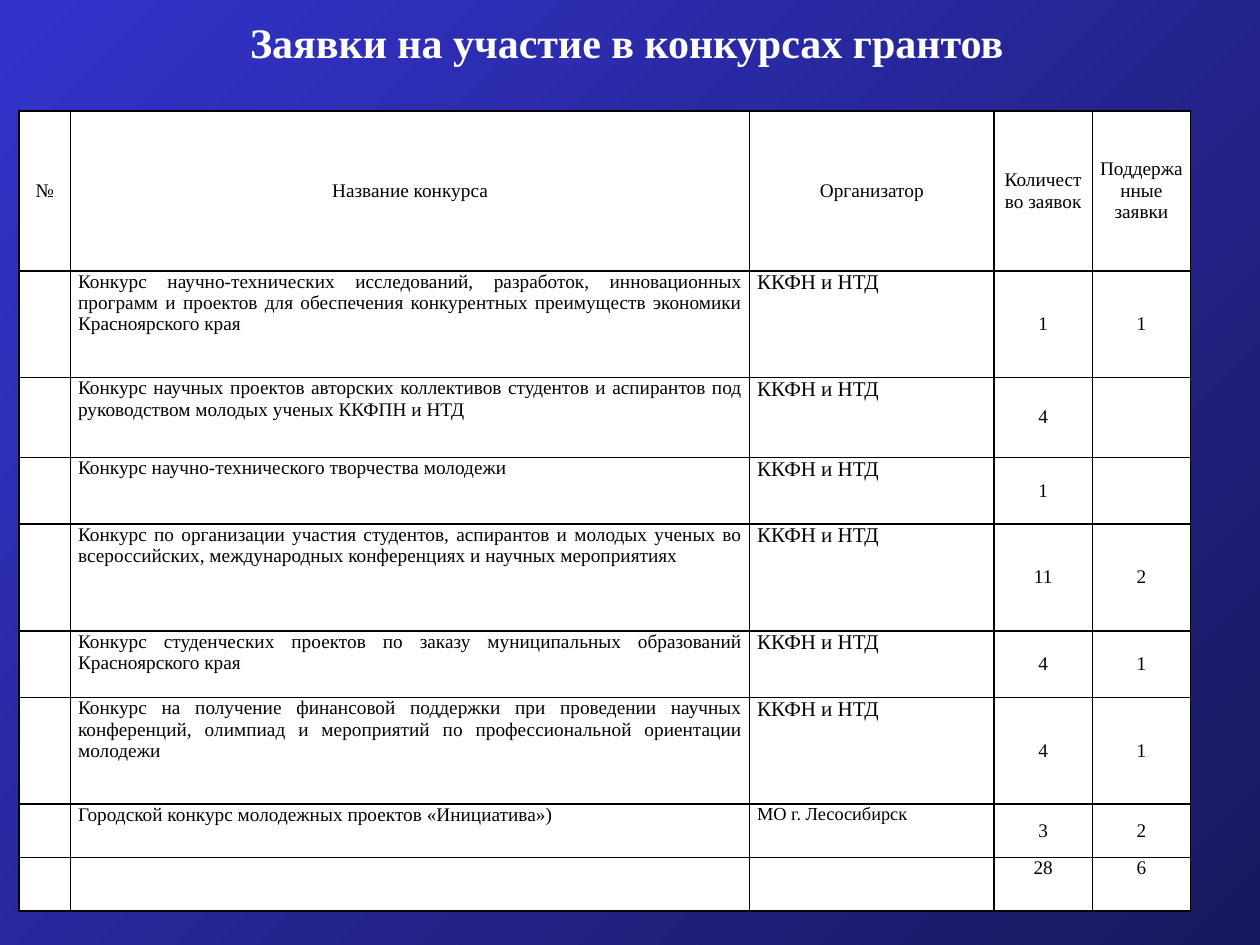
from lxml import etree
from pptx import Presentation
from pptx.dml.color import RGBColor
from pptx.enum.text import MSO_ANCHOR, PP_ALIGN
from pptx.oxml.ns import qn
from pptx.util import Inches, Pt

CENTER, JUSTIFY = PP_ALIGN.CENTER, PP_ALIGN.JUSTIFY
TOP, MIDDLE = MSO_ANCHOR.TOP, MSO_ANCHOR.MIDDLE

THEME = {
    "font": "Times New Roman",
    "title": {"size": 24, "bold": True, "color": "FFFFFF"},
    "body": {"size": 11, "bold": False, "color": "000000"},
    "organizer": {"size": 12, "bold": False, "color": "000000"},
    "city": {"size": 10.5, "bold": False, "color": "000000"},
    "cell": "FFFFFF",
    "border": "000000",
    "border_width": 1,
    "gradient": ("3333CC", "18185E"),
}

COLUMN_WIDTHS = (0.41, 5.39, 1.94, 0.78, 0.78)
ROW_UNITS = (6, 4, 3, 2.5, 4, 2.5, 4, 2, 2)
TABLE_HEIGHT = 6.35
FUND = "ККФН и НТД"
ROWS = (
    ("№", "Название конкурса", "Организатор", "Количество заявок", "Поддержанные заявки"),
    ("", "Конкурс научно-технических исследований, разработок, инновационных программ и проектов "
         "для обеспечения конкурентных преимуществ экономики Красноярского края", FUND, "1", "1"),
    ("", "Конкурс научных проектов авторских коллективов студентов и аспирантов "
         "под руководством молодых ученых ККФПН и НТД", FUND, "4", ""),
    ("", "Конкурс научно-технического творчества молодежи", FUND, "1", ""),
    ("", "Конкурс по организации участия студентов, аспирантов и молодых ученых во всероссийских, "
         "международных конференциях и научных мероприятиях", FUND, "11", "2"),
    ("", "Конкурс студенческих проектов по заказу муниципальных образований Красноярского края",
     FUND, "4", "1"),
    ("", "Конкурс на получение финансовой поддержки при проведении научных конференций, олимпиад "
         "и мероприятий по профессиональной ориентации молодежи", FUND, "4", "1"),
    ("", "Городской конкурс молодежных проектов «Инициатива»)", "МО г. Лесосибирск", "3", "2"),
    ("", "", "", "28", "6"),
)


def write_text(frame, text, style, alignment):
    para = frame.paragraphs[0]
    para.alignment = alignment
    span = para.add_run()
    span.text = text
    formats = {"name": THEME["font"], "size": Pt(style["size"]), "bold": style["bold"]}
    for name, value in formats.items():
        setattr(span.font, name, value)
    span.font.color.rgb = RGBColor.from_string(style["color"])


def draw_borders(cell):
    properties = cell._tc.get_or_add_tcPr()
    for index, side in enumerate(("a:lnL", "a:lnR", "a:lnT", "a:lnB")):
        line = etree.Element(qn(side), w=str(Pt(THEME["border_width"])))
        fill = etree.SubElement(line, qn("a:solidFill"))
        etree.SubElement(fill, qn("a:srgbClr"), val=THEME["border"])
        properties.insert(index, line)


deck = Presentation()
deck.slide_width, deck.slide_height = Inches(10), Inches(7.5)
page = deck.slides.add_slide(deck.slide_layouts[5])

# Diagonal background, light at the top left
background = page.background.fill
background.gradient()
background.gradient_angle = 315
for stop, color in zip(background.gradient_stops, THEME["gradient"]):
    stop.color.rgb = RGBColor.from_string(color)

# Title, set slightly left of its box's middle by the wider right margin
title = page.shapes.title
title_place = {"left": Inches(0.81), "top": 0, "width": Inches(8.5), "height": Inches(0.66)}
for name, value in title_place.items():
    setattr(title, name, value)
title_format = {"vertical_anchor": MIDDLE, "word_wrap": True, "margin_right": Inches(0.27)}
for name, value in title_format.items():
    setattr(title.text_frame, name, value)
write_text(title.text_frame, "Заявки на участие в конкурсах грантов", THEME["title"], CENTER)

# Table grid
table = page.shapes.add_table(
    len(ROWS), len(COLUMN_WIDTHS), Inches(0.15), Inches(0.88),
    Inches(sum(COLUMN_WIDTHS)), Inches(TABLE_HEIGHT)).table
table.first_row = table.horz_banding = False
for column, width in zip(table.columns, COLUMN_WIDTHS):
    column.width = Inches(width)
for row, units in zip(table.rows, ROW_UNITS):
    row.height = Inches(TABLE_HEIGHT * units / sum(ROW_UNITS))

# Cells: header and counts are centred, names and organizers justified
for row_index, texts in enumerate(ROWS):
    is_header, is_total = row_index == 0, row_index == len(ROWS) - 1
    for column_index, text in enumerate(texts):
        cell = table.cell(row_index, column_index)
        centered = is_header or column_index > 2
        cell_format = {
            "margin_left": Inches(0.06), "margin_right": Inches(0.06),
            "margin_top": 0, "margin_bottom": 0,
            "vertical_anchor": MIDDLE if centered and not is_total else TOP,
        }
        for name, value in cell_format.items():
            setattr(cell, name, value)
        cell.fill.solid()
        cell.fill.fore_color.rgb = RGBColor.from_string(THEME["cell"])
        draw_borders(cell)
        if text:
            style = "body"
            if column_index == 2 and not is_header:
                style = "organizer" if text == FUND else "city"
            write_text(cell.text_frame, text, THEME[style], CENTER if centered else JUSTIFY)

deck.save("out.pptx")
